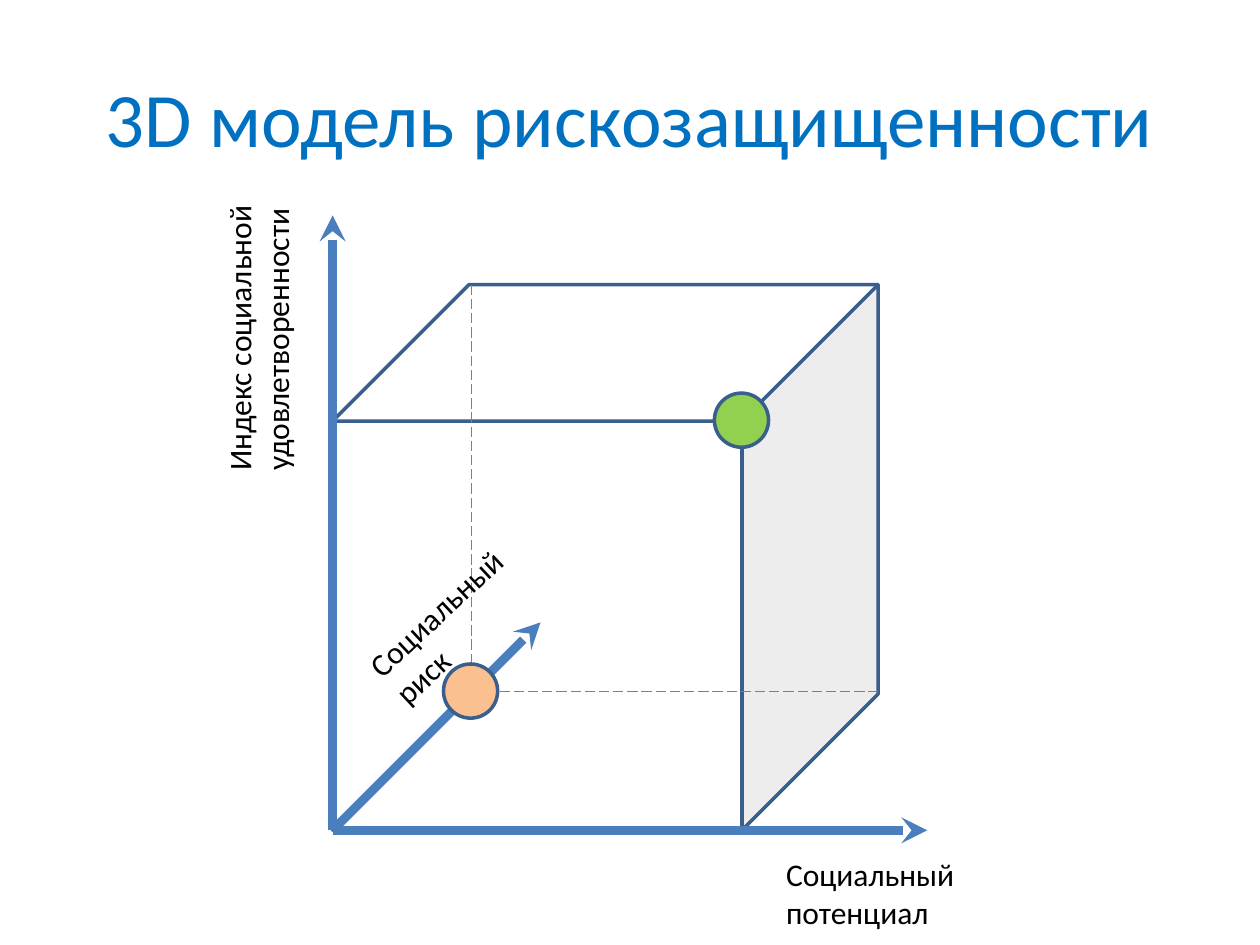
"""Build a slide with a 3D cube model of social risk protection."""
from dataclasses import dataclass

from lxml import etree
from pptx import Presentation
from pptx.dml.color import RGBColor
from pptx.enum import dml, shapes, text
from pptx.oxml import ns
from pptx.util import Inches, Pt


@dataclass(frozen=True)
class Theme:
    font: str = "Calibri"
    title_size: int = 44
    label_size: int = 18
    title: str = "0070C0"
    ink: str = "000000"
    white: str = "FFFFFF"
    axis: str = "4B7EBC"
    hidden_edge: str = "7F7F7F"
    outline: str = "3A5F8C"
    green: str = "92D050"
    orange: str = "FAC090"


theme = Theme()
deck = Presentation()
deck.slide_width, deck.slide_height = Inches(10), Inches(7.5)
page = deck.slides.add_slide(deck.slide_layouts[6])


def add_solid(kind, left, top, size, color):
    solid = page.shapes.add_shape(kind, Inches(left), Inches(top), Inches(size), Inches(size))
    solid.shadow.inherit = False
    solid.fill.solid()
    solid.fill.fore_color.rgb = RGBColor.from_string(color)
    solid.line.color.rgb = RGBColor.from_string(theme.outline)
    solid.line.width = Pt(2)
    return solid


def add_label(words, left, top, width, height, size, color, angle=0):
    box = page.shapes.add_textbox(Inches(left), Inches(top), Inches(width), Inches(height))
    box.rotation = angle
    box.text_frame.word_wrap = True
    para = box.text_frame.paragraphs[0]
    para.text = words
    para.font.name = theme.font
    para.font.size = Pt(size)
    para.font.color.rgb = RGBColor.from_string(color)
    return box


cube = add_solid(shapes.MSO_SHAPE.CUBE, 2.64, 2.26, 4.33, theme.white)
cube_color = cube.fill._xPr.find(ns.qn("a:solidFill"))[0]
etree.SubElement(cube_color, ns.qn("a:alpha"), val="35000")

origin = (2.64, 6.59)
back_corner = (3.74, 5.49)
lines = [
    (origin, (7.36, 6.59), True),
    (origin, (2.64, 1.71), True),
    ((3.74, 2.26), back_corner, False),
    (back_corner, (6.97, 5.49), False),
    (back_corner, origin, False),
    (origin, (4.29, 4.94), True),
]
for start, end, is_axis in lines:
    points = [Inches(value) for value in start + end]
    edge = page.shapes.add_connector(shapes.MSO_CONNECTOR.STRAIGHT, *points)
    edge.line.color.rgb = RGBColor.from_string(theme.axis if is_axis else theme.hidden_edge)
    edge.line.width = Pt(5 if is_axis else 0.75)
    if is_axis:
        etree.SubElement(edge.line._get_or_add_ln(), ns.qn("a:tailEnd"), type="stealth")
    else:
        edge.line.dash_style = dml.MSO_LINE.LONG_DASH
    etree.SubElement(edge._element.spPr, ns.qn("a:effectLst"))

labels = [
    ("Социальный потенциал", 6.14, 6.74, 1.65, 0),
    ("Индекс социальной удовлетворенности", 0.79, 2.22, 2.52, 270),
    ("Социальный риск", 2.78, 4.58, 1.65, 317),
]
for words, left, top, width, angle in labels:
    add_label(words, left, top, width, 0.71, theme.label_size, theme.ink, angle)

for left, top, color in [(5.67, 3.12, theme.green), (3.52, 5.27, theme.orange)]:
    add_solid(shapes.MSO_SHAPE.OVAL, left, top, 0.43, color)

title = add_label("3D модель рискозащищенности", 0.5, 0.3, 9, 1.25, theme.title_size, theme.title)
title.text_frame.vertical_anchor = text.MSO_ANCHOR.MIDDLE
title.text_frame.paragraphs[0].alignment = text.PP_ALIGN.CENTER

deck.save("out.pptx")
